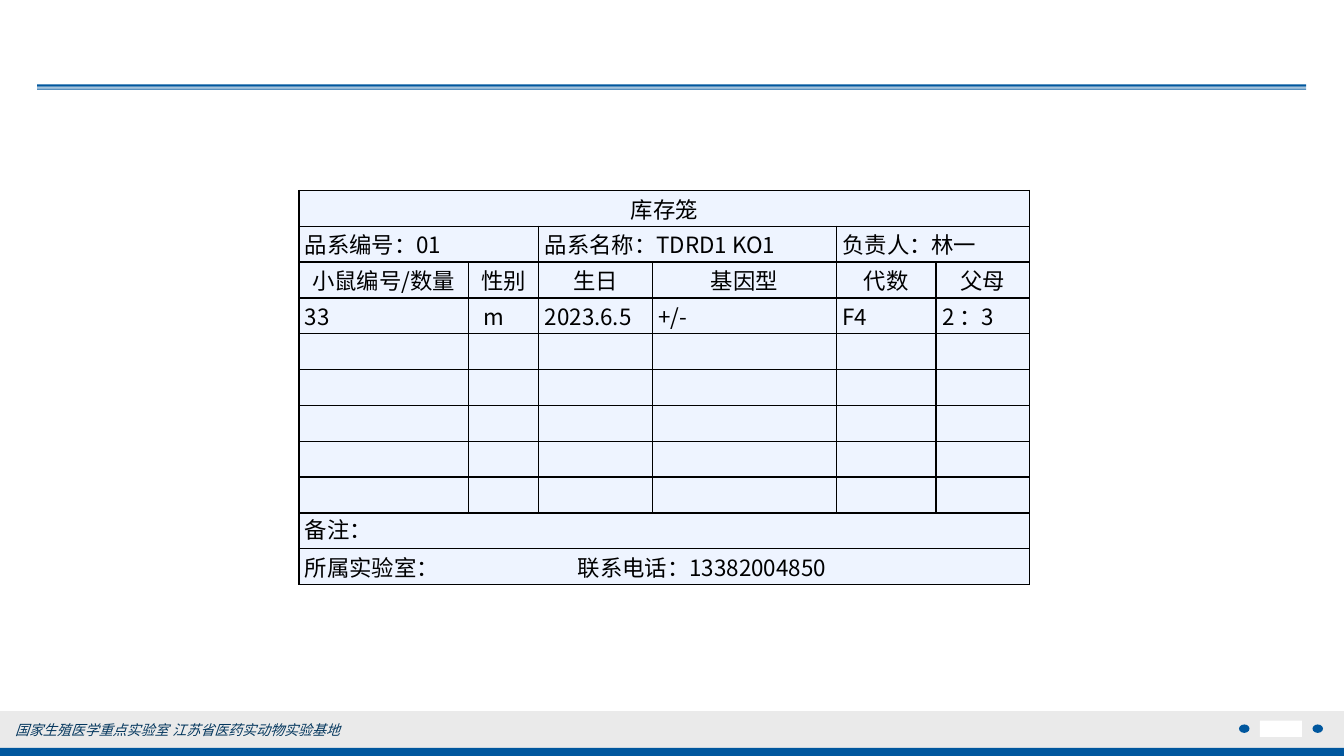
from lxml import etree
from pptx import Presentation
from pptx.dml.color import RGBColor
from pptx.enum.shapes import MSO_SHAPE
from pptx.enum.text import MSO_ANCHOR, PP_ALIGN
from pptx.oxml.ns import qn
from pptx.util import Pt

RECT, OVAL = MSO_SHAPE.RECTANGLE, MSO_SHAPE.OVAL
LEFT, CENTER = PP_ALIGN.LEFT, PP_ALIGN.CENTER
TOP, MIDDLE = MSO_ANCHOR.TOP, MSO_ANCHOR.MIDDLE
BLUE, GREY, WHITE, PALE = "00579E", "EAEAEA", "FFFFFF", "EEF4FF"
CJK = "Noto Sans CJK SC"


def paint(target, color):
    """Give a fill a solid colour."""
    target.solid()
    target.fore_color.rgb = RGBColor.from_string(color)


def write(para, text, size=16, font=CJK, color="000000", italic=False, align=LEFT):
    """Write one formatted span into a paragraph."""
    para.alignment = align
    span = para.add_run()
    span.text = text
    span.font.size = Pt(size)
    span.font.name = font
    span.font.italic = italic
    paint(span.font.fill, color)
    east_asian = etree.SubElement(span.font._element, qn("a:ea"))
    east_asian.set("typeface", font)


deck = Presentation()
deck.slide_width, deck.slide_height = Pt(960), Pt(540)
page = deck.slides.add_slide(deck.slide_layouts[6])

# Header rules, footer bands and page number mark
for kind, left, top, width, height, color in (
    (RECT, 26.5, 60.3, 906.5, 1.6, BLUE),
    (RECT, 26.5, 62.5, 906.5, 0.6, BLUE),
    (RECT, 26.5, 63.5, 906.5, 0.6, BLUE),
    (RECT, 0, 508, 960, 32, GREY),
    (RECT, 0, 534.2, 960, 5.8, BLUE),
    (OVAL, 885, 517.5, 7.5, 6, BLUE),
    (OVAL, 937.5, 517.5, 7.5, 6, BLUE),
    (RECT, 900, 514.8, 30, 11.5, WHITE),
):
    shape = page.shapes.add_shape(kind, Pt(left), Pt(top), Pt(width), Pt(height))
    shape.shadow.inherit = False
    paint(shape.fill, color)
    shape.line.fill.background()

# Footer text
footer = page.shapes.add_textbox(Pt(0.7), Pt(512), Pt(252), Pt(19.4))
footer.text_frame.word_wrap = False
write(footer.text_frame.paragraphs[0], "国家生殖医学重点实验室 江苏省医药实动物实验基地",
      size=10, font="Arial", color="03365D", italic=True, align=CENTER)

# Cage card table
column_widths = [121, 50.4, 81.2, 131.4, 71.2, 66.8]
row_count, row_height = 11, 25.6
table = page.shapes.add_table(row_count, len(column_widths), Pt(213.5), Pt(136),
                              Pt(sum(column_widths)), Pt(row_count * row_height)).table
table.first_row = table.horz_banding = False
for column, width in zip(table.columns, column_widths):
    column.width = Pt(width)
for row in table.rows:
    row.height = Pt(row_height)

# Cell texts by row and column
card = {
    (0, 0): "库存笼",
    (1, 0): "品系编号：01", (1, 2): "品系名称：TDRD1 KO1", (1, 4): "负责人：林一",
    (9, 0): "备注：", (10, 0): "所属实验室：\t联系电话：13382004850",
}
headings = ["小鼠编号/数量", "性别", "生日", "基因型", "代数", "父母"]
mouse = ["33", "m", "2023.6.5", "+/-", "F4", "2 ：3"]
for number, texts in ((2, headings), (3, mouse)):
    for index, text in enumerate(texts):
        card[number, index] = text

# Cell borders, fills and texts
for row in range(row_count):
    for column in range(len(column_widths)):
        cell = table.cell(row, column)
        cell.margin_left = cell.margin_right = Pt(4.3)
        cell.margin_top = cell.margin_bottom = Pt(0)
        cell.vertical_anchor = TOP if row == 9 else MIDDLE
        for side in ("a:lnL", "a:lnR", "a:lnT", "a:lnB"):
            border = etree.SubElement(cell._tc.tcPr, qn(side), w=str(Pt(1)))
            ink = etree.SubElement(border, qn("a:solidFill"))
            etree.SubElement(ink, qn("a:srgbClr"), val="000000")
        paint(cell.fill, PALE)
        para = cell.text_frame.paragraphs[0]
        if (row, column) in card:
            write(para, card[row, column], align=CENTER if row in (0, 2) else LEFT)
        else:
            etree.SubElement(para._p, qn("a:endParaRPr"), sz="1600")

# Indent of the sex entry, tab stop before the phone number
table.cell(3, 1).margin_left = Pt(11)
properties = table.cell(10, 0).text_frame.paragraphs[0]._p.get_or_add_pPr()
tabs = etree.SubElement(properties, qn("a:tabLst"))
etree.SubElement(tabs, qn("a:tab"), pos=str(Pt(195)), algn="l")

# Merged rows
for row in (0, 9, 10):
    table.cell(row, 0).merge(table.cell(row, 5))
for column in (0, 2, 4):
    table.cell(1, column).merge(table.cell(1, column + 1))

deck.save("out.pptx")
